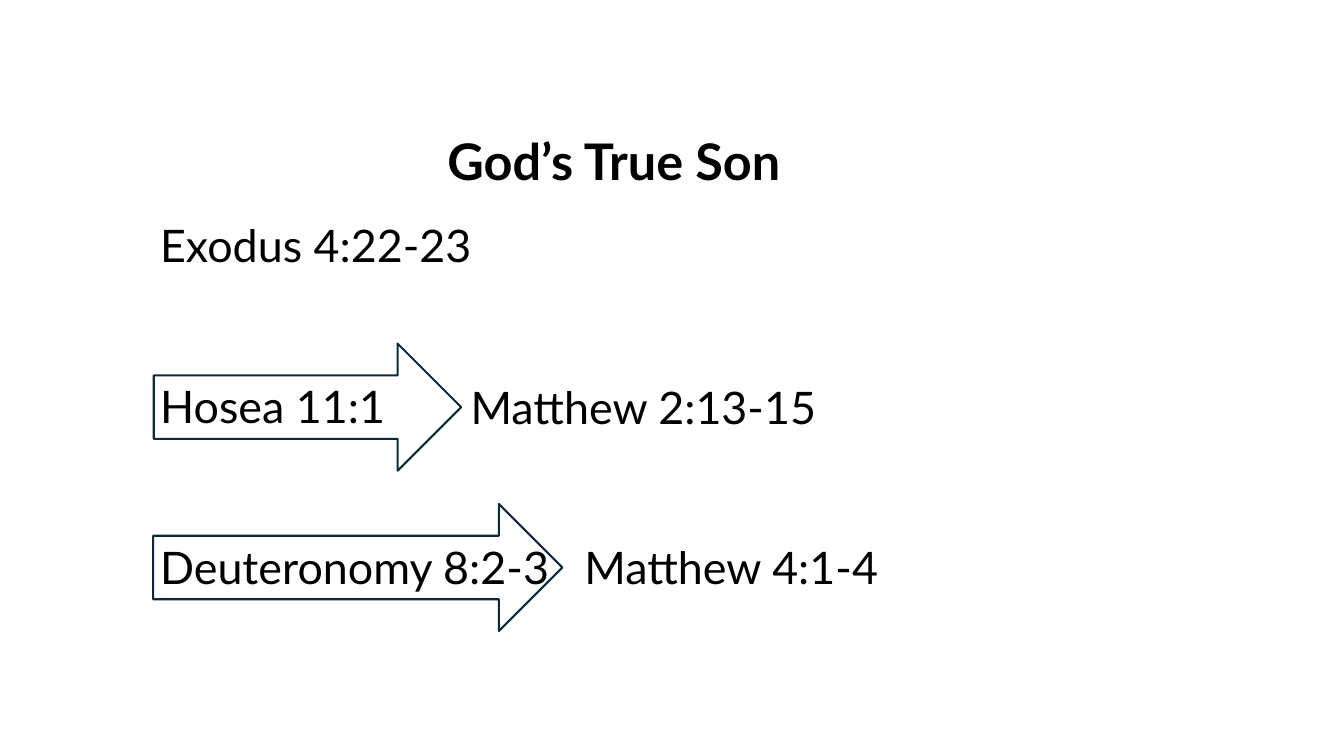
"""Build the slide on God's True Son with its verse pairs."""
from dataclasses import dataclass

from pptx import Presentation
from pptx.dml.color import RGBColor
from pptx.enum.shapes import MSO_SHAPE
from pptx.enum.text import MSO_ANCHOR, PP_ALIGN
from pptx.slide import Slide
from pptx.text.text import TextFrame
from pptx.util import Pt


@dataclass(frozen=True)
class Theme:
    font: str = "Lato"
    ink: RGBColor = RGBColor(0, 0, 0)
    edge: RGBColor = RGBColor(0x09, 0x2A, 0x39)
    paper: RGBColor = RGBColor(255, 255, 255)
    head: float = 36
    body: float = 32
    stroke: float = 1.5


@dataclass(frozen=True)
class Box:
    left: float
    top: float
    width: float
    height: float

    def place(self) -> tuple[Pt, Pt, Pt, Pt]:
        return Pt(self.left), Pt(self.top), Pt(self.width), Pt(self.height)


@dataclass(frozen=True)
class Pair:
    source: str
    target: str
    arrow: Box
    label: Box


THEME = Theme()
TITLE = Box(107.3, 89.3, 662.4, 51.1)
VERSES = Box(107.3, 151.9, 774.7, 278.6)
FIRST = "Exodus 4:22-23"
GAP = 2 * 1.2 * THEME.body
PAIRS = (
    Pair("Hosea 11:1", "Matthew 2:13-15",
         Box(109.8, 245.5, 219.6, 90.7), Box(329, 267.8, 265.7, 46.1)),
    Pair("Deuteronomy 8:2-3", "Matthew 4:1-4",
         Box(109.4, 360, 292.3, 90.7), Box(410.4, 382.3, 252, 46.1)),
)


def write(frame: TextFrame, lines: list[str], size: float, bold: bool = False,
          align: PP_ALIGN = PP_ALIGN.LEFT, gap: float = 0) -> None:
    frame.word_wrap = True
    frame.vertical_anchor = MSO_ANCHOR.TOP
    for i, line in enumerate(lines):
        para = frame.add_paragraph() if i else frame.paragraphs[0]
        para.alignment = align
        para.space_before = Pt(gap if i else 0)
        run = para.add_run()
        run.text = line
        run.font.name = THEME.font
        run.font.size = Pt(size)
        run.font.bold = bold
        run.font.color.rgb = THEME.ink


def add_text(slide: Slide, box: Box, lines: list[str], gap: float = 0) -> None:
    shape = slide.shapes.add_textbox(*box.place())
    write(shape.text_frame, lines, THEME.body, gap=gap)


def add_arrow(slide: Slide, box: Box) -> None:
    shape = slide.shapes.add_shape(MSO_SHAPE.RIGHT_ARROW, *box.place())
    shape.shadow.inherit = False
    shape.fill.background()
    shape.line.color.rgb = THEME.edge
    shape.line.width = Pt(THEME.stroke)


def add_title(slide: Slide, text: str) -> None:
    title = slide.shapes.title
    title.left, title.top, title.width, title.height = TITLE.place()
    write(title.text_frame, [text], THEME.head, True, PP_ALIGN.CENTER)


def main() -> None:
    deck = Presentation()
    deck.slide_width, deck.slide_height = Pt(960), Pt(540)
    slide = deck.slides.add_slide(deck.slide_layouts[5])
    slide.background.fill.solid()
    slide.background.fill.fore_color.rgb = THEME.paper
    add_title(slide, "God’s True Son")
    add_text(slide, VERSES, [FIRST, *(pair.source for pair in PAIRS)], GAP)
    for pair in PAIRS:
        add_arrow(slide, pair.arrow)
        add_text(slide, pair.label, [pair.target])
    deck.save("out.pptx")


if __name__ == "__main__":
    main()
